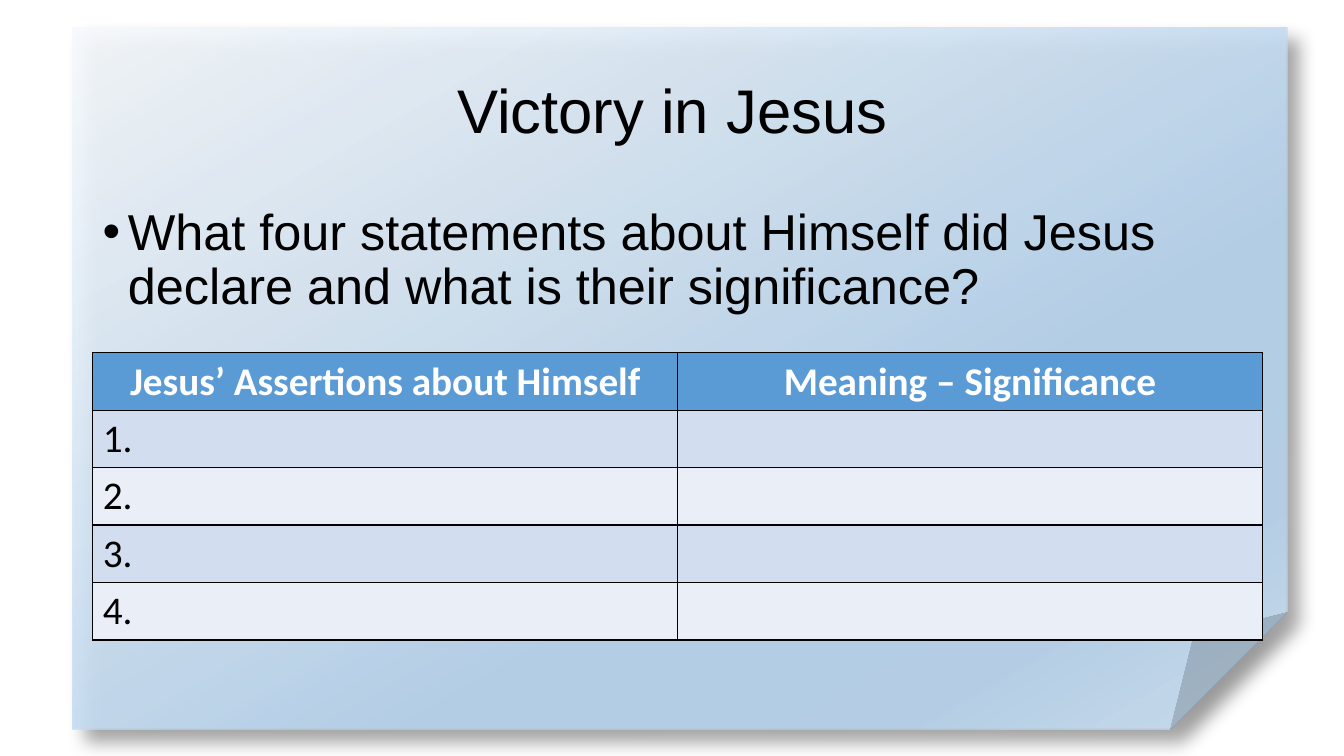
from lxml.etree import SubElement
from pptx import Presentation
from pptx.dml.color import RGBColor
from pptx.enum.shapes import MSO_SHAPE
from pptx.enum.text import MSO_ANCHOR, PP_ALIGN
from pptx.oxml import parse_xml
from pptx.oxml.ns import nsdecls, qn
from pptx.util import Inches, Pt


def color(code):
    return RGBColor.from_string(code)


class Deck:
    """Holds the style and the current slide, and draws each kind of element."""

    font = "Arial"
    cell_font = "Calibri"
    ink = "000000"
    white = "FFFFFF"
    head = "5B9BD5"
    bands = ("D2DEEF", "EAEFF7")

    def __init__(self):
        self.show = Presentation()
        self.show.slide_width = Inches(13.33)
        self.show.slide_height = Inches(7.5)
        self.slide = self.show.slides.add_slide(self.show.slide_layouts[6])
        back = self.slide.background.fill
        back.solid()
        back.fore_color.rgb = color(self.white)

    def add_words(self, para, text, size, font, tint, bold=False):
        run = para.add_run()
        run.text = text
        run.font.size = Pt(size)
        run.font.name = font
        run.font.bold = bold
        run.font.color.rgb = color(tint)

    def sheet(self, box, stops, angle):
        shape = self.slide.shapes.add_shape(
            MSO_SHAPE.FOLDED_CORNER, *map(Inches, box))
        shape.shadow.inherit = False
        shape.fill.background()
        shape.line.fill.background()
        parts = "".join(
            f'<a:gs pos="{pos * 1000}"><a:srgbClr val="{tint}">'
            f'<a:alpha val="{alpha * 1000}"/></a:srgbClr></a:gs>'
            for pos, tint, alpha in stops)
        grad = parse_xml(
            f'<a:gradFill {nsdecls("a")} rotWithShape="1">'
            f'<a:gsLst>{parts}</a:gsLst>'
            f'<a:lin ang="{angle * 60000}" scaled="0"/></a:gradFill>')
        props = shape.element.spPr
        props.replace(props.find(qn("a:noFill")), grad)
        shade = SubElement(
            props.find(qn("a:effectLst")), qn("a:outerShdw"),
            blurRad=str(Pt(13)), dist=str(Pt(13)), dir=str(45 * 60000),
            algn="tl", rotWithShape="0")
        tone = SubElement(shade, qn("a:srgbClr"), val=self.ink)
        SubElement(tone, qn("a:alpha"), val="40000")

    def text(self, box, words, size, anchor=MSO_ANCHOR.TOP,
             align=PP_ALIGN.LEFT, bullet=False):
        frame = self.slide.shapes.add_textbox(*map(Inches, box)).text_frame
        frame.word_wrap = True
        frame.vertical_anchor = anchor
        para = frame.paragraphs[0]
        para.alignment = align
        para.line_spacing = 0.9
        if bullet:
            props = para._p.get_or_add_pPr()
            props.set("marL", str(Inches(0.25)))
            props.set("indent", str(Inches(-0.25)))
            SubElement(props, qn("a:buFont"), typeface=self.font)
            SubElement(props, qn("a:buChar"), char="•")
        self.add_words(para, words, size, self.font, self.ink)

    def cell(self, cell, words, fill, tint, align, bold):
        para = cell.text_frame.paragraphs[0]
        para.alignment = align
        if words:
            self.add_words(para, words, 28, self.cell_font, tint, bold)
        props = cell._tc.get_or_add_tcPr()
        for side in ("lnL", "lnR", "lnT", "lnB"):
            line = SubElement(props, qn(f"a:{side}"), w=str(Pt(1)))
            paint = SubElement(line, qn("a:solidFill"))
            SubElement(paint, qn("a:srgbClr"), val=self.ink)
        cell.fill.solid()
        cell.fill.fore_color.rgb = color(fill)

    def table(self, left, top, width, height, rows):
        table = self.slide.shapes.add_table(
            len(rows), len(rows[0]), Inches(left), Inches(top),
            Inches(width), Inches(height * len(rows))).table
        for i, row in enumerate(rows):
            table.rows[i].height = Inches(height)
            for j, words in enumerate(row):
                if i == 0:
                    look = self.head, self.white, PP_ALIGN.CENTER, True
                else:
                    band = self.bands[(i - 1) % 2]
                    look = band, self.ink, PP_ALIGN.LEFT, False
                self.cell(table.cell(i, j), words, *look)


def main():
    deck = Deck()
    deck.sheet((0.72, 0.27, 12.05, 6.97),
               [(0, "F7FAFD", 91), (64, "B5D2EC", 90),
                (83, "B5D2EC", 89), (100, "CEE1F2", 91)], 60)
    deck.text((0.92, 0.4, 11.5, 1.45), "Victory in Jesus", 44,
              MSO_ANCHOR.MIDDLE, PP_ALIGN.CENTER)
    deck.text((0.92, 2, 11.5, 4.76),
              "What four statements about Himself did Jesus declare "
              "and what is their significance?", 36, bullet=True)
    heads = ("Jesus’ Assertions about Himself", "Meaning – Significance")
    deck.table(0.92, 3.5, 11.6, 0.57,
               [heads] + [(f"{n}.", "") for n in range(1, 5)])
    deck.show.save("out.pptx")


if __name__ == "__main__":
    main()
